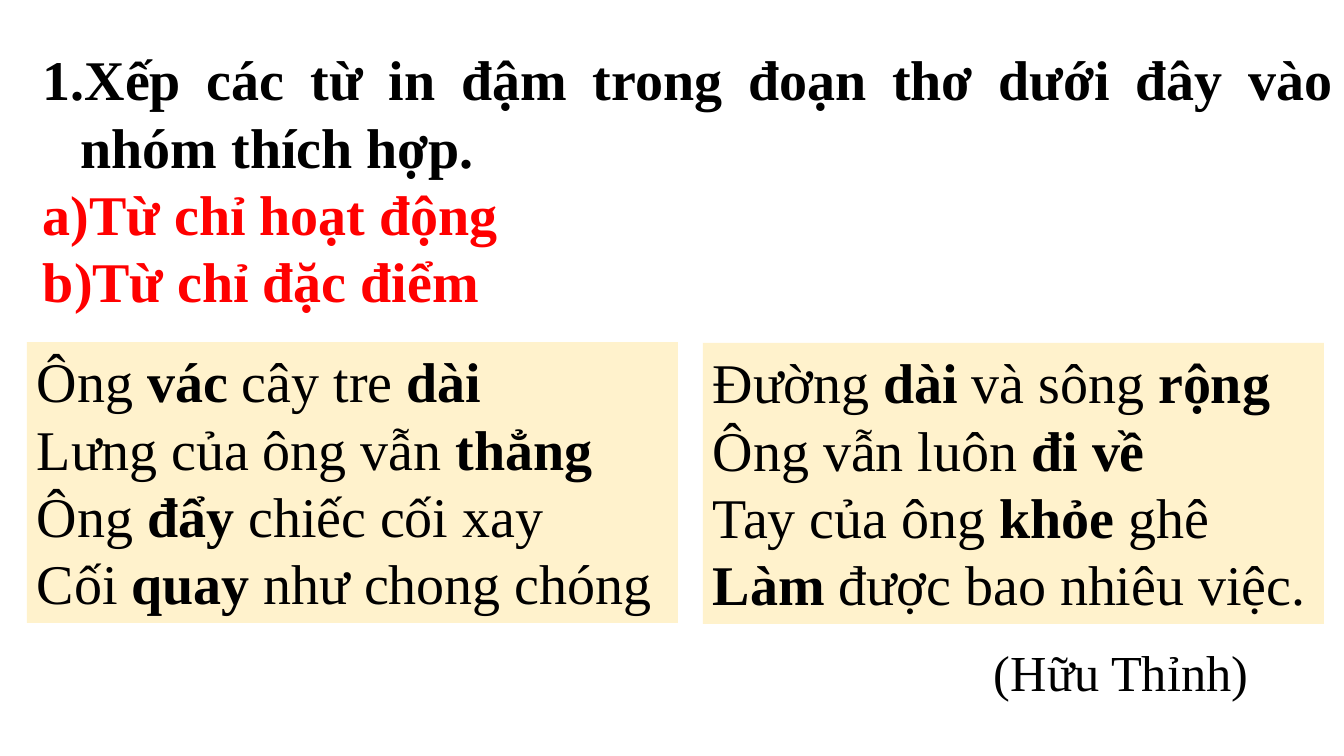
import pptx
import pptx.dml.color
import pptx.enum.shapes
import pptx.enum.text
import pptx.oxml.ns
import pptx.util
from lxml import etree

RGB = pptx.dml.color.RGBColor
BLACK = RGB(0x00, 0x00, 0x00)
RED = RGB(0xFF, 0x00, 0x00)
CREAM = RGB(0xFF, 0xF2, 0xCC)
ALIGN = pptx.enum.text.PP_ALIGN
FONT = "Times New Roman"
SCALE = 914400 / 100.8


def px(*sizes):
    return [pptx.util.Emu(round(size * SCALE)) for size in sizes]


class Page:
    """Hold the text style and the current slide, and draw its elements."""

    def __init__(self, deck):
        self.slide = deck.slides.add_slide(deck.slide_layouts[6])
        self.size = 40

    def style(self, font, color=BLACK, bold=False, size=None):
        font.name = FONT
        font.size = pptx.util.Pt(size or self.size)
        font.color.rgb = color
        font.bold = bold

    def frame(self, shape):
        frame = shape.text_frame
        frame.word_wrap = True
        frame.auto_size = pptx.enum.text.MSO_AUTO_SIZE.SHAPE_TO_FIT_TEXT
        frame.vertical_anchor = pptx.enum.text.MSO_ANCHOR.TOP
        return frame

    def verse(self, box, lines):
        kind = pptx.enum.shapes.MSO_SHAPE.RECTANGLE
        shape = self.slide.shapes.add_shape(kind, *px(*box))
        shape.shadow.inherit = False
        shape.fill.solid()
        shape.fill.fore_color.rgb = CREAM
        shape.line.fill.background()
        frame = self.frame(shape)
        frame.text = "\n".join(lines)
        for para, line in zip(frame.paragraphs, lines):
            para.text = ""
            para.alignment = ALIGN.LEFT
            for spot, part in enumerate(line.split("*")):
                if part:
                    run = para.add_run()
                    run.text = part
                    self.style(run.font, bold=spot % 2 == 1)

    def task(self, box, items):
        frame = self.frame(self.slide.shapes.add_textbox(*px(*box)))
        frame.text = "\n".join(text for text, mark, color in items)
        for para, (text, mark, color) in zip(frame.paragraphs, items):
            para.alignment = ALIGN.JUSTIFY
            props = para._p.get_or_add_pPr()
            indent = pptx.util.Inches(0.375)
            props.set("marL", str(indent))
            props.set("indent", str(-indent))
            tag = pptx.oxml.ns.qn("a:buAutoNum")
            etree.SubElement(props, tag, type=mark)
            self.style(para.runs[0].font, color, bold=True)

    def label(self, box, text, size):
        frame = self.frame(self.slide.shapes.add_textbox(*px(*box)))
        frame.text = text
        self.style(frame.paragraphs[0].runs[0].font, size=size)


def main():
    deck = pptx.Presentation()
    deck.slide_width, deck.slide_height = px(1344, 756)
    page = Page(deck)
    page.verse((27, 342, 651, 281), [
        "Ông *vác *cây tre *dài*",
        "Lưng của ông vẫn *thẳng*",
        "Ông *đẩy *chiếc cối xay",
        "Cối *quay *như chong chóng",
    ])
    page.verse((703, 343, 621, 281), [
        "Đường *dài *và sông *rộng*",
        "Ông vẫn luôn *đi về*",
        "Tay của ông *khỏe *ghê",
        "*Làm *được bao nhiêu việc.",
    ])
    page.task((33, 40, 1310, 281), [
        ("Xếp các từ in đậm trong đoạn thơ dưới đây vào nhóm thích hợp.",
         "arabicPeriod", BLACK),
        ("Từ chỉ hoạt động", "alphaLcParenR", RED),
        ("Từ chỉ đặc điểm", "alphaLcParenR", RED),
    ])
    page.label((984, 636, 283, 72), "(Hữu Thỉnh)", 36)
    deck.save("out.pptx")


if __name__ == "__main__":
    main()
